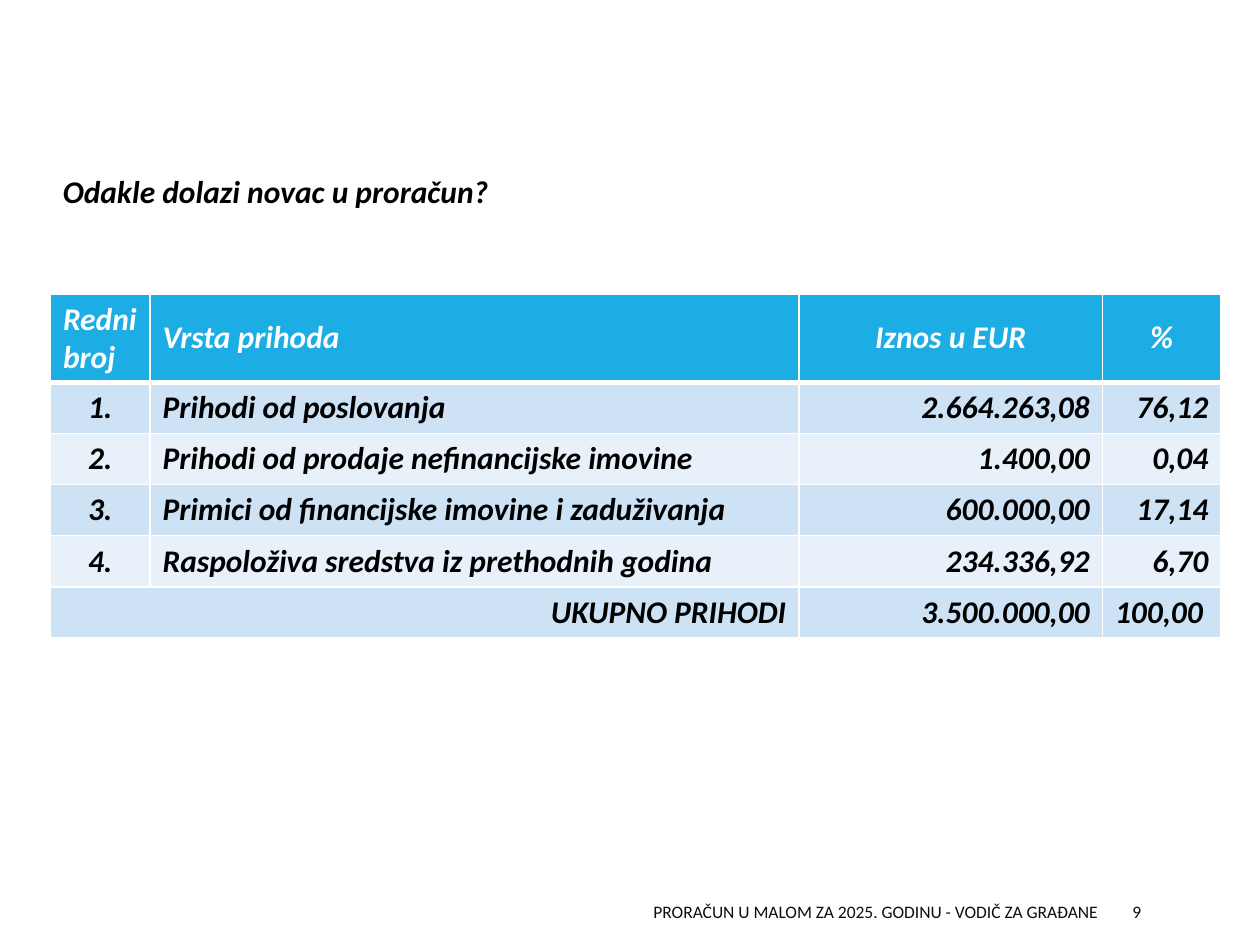
from lxml import etree
from pptx import Presentation
from pptx.dml.color import RGBColor
from pptx.enum.text import MSO_ANCHOR, PP_ALIGN
from pptx.oxml.ns import qn
from pptx.util import Pt

LEFT, CENTER, RIGHT = PP_ALIGN.LEFT, PP_ALIGN.CENTER, PP_ALIGN.RIGHT
TOP, MIDDLE = MSO_ANCHOR.TOP, MSO_ANCHOR.MIDDLE

WHITE = RGBColor(0xFF, 0xFF, 0xFF)
BLACK = RGBColor(0, 0, 0)
FOOTER_GRAY = RGBColor(0x0D, 0x0D, 0x0D)
HEADER_BLUE = RGBColor(0x1C, 0xAD, 0xE4)
BAND_DARK = RGBColor(0xCD, 0xE3, 0xF5)
BAND_LIGHT = RGBColor(0xE8, 0xF1, 0xFA)

COLUMN_WIDTHS = (56.9, 370.8, 173.5, 67.7)
ROW_HEIGHT = 29.25
REVENUE_ROWS = (
    ("Redni broj", "Vrsta prihoda", "Iznos u EUR", "%"),
    ("1.", "Prihodi od poslovanja", "2.664.263,08", "76,12"),
    ("2.", "Prihodi od prodaje nefinancijske imovine", "1.400,00", "0,04"),
    ("3.", "Primici od financijske imovine i zaduživanja", "600.000,00", "17,14"),
    ("4.", "Raspoloživa sredstva iz prethodnih godina", "234.336,92", "6,70"),
    ("UKUPNO PRIHODI", "", "3.500.000,00", "100,00"),
)
HEADER_ALIGNMENTS = (LEFT, LEFT, CENTER, CENTER)
BODY_ALIGNMENTS = (CENTER, LEFT, RIGHT, RIGHT)
TOTAL_ALIGNMENTS = (RIGHT, LEFT, RIGHT, LEFT)


def write_text(frame, text, font="Calibri", size=18, color=BLACK,
               emphasis=True, alignment=LEFT):
    paragraph = frame.paragraphs[0]
    paragraph.alignment = alignment
    run = paragraph.add_run()
    run.text = text
    run.font.name = font
    run.font.size = Pt(size)
    run.font.color.rgb = color
    run.font.bold = emphasis
    run.font.italic = emphasis


def set_borders(cell, **widths):
    properties = cell._tc.get_or_add_tcPr()
    for position, side in enumerate("LRTB"):
        line = etree.Element(qn(f"a:ln{side}"), w=str(Pt(widths.get(side, 1))))
        fill = etree.SubElement(line, qn("a:solidFill"))
        etree.SubElement(fill, qn("a:srgbClr"), val=str(WHITE))
        properties.insert(position, line)


class SlideBuilder:
    def __init__(self, presentation, font="Calibri"):
        self.slide = presentation.slides.add_slide(presentation.slide_layouts[6])
        self.font = font

    def add_text(self, text, left, top, width, height, anchor=TOP, **style):
        shape = self.slide.shapes.add_textbox(Pt(left), Pt(top), Pt(width), Pt(height))
        frame = shape.text_frame
        frame.word_wrap = True
        frame.vertical_anchor = anchor
        write_text(frame, text, font=self.font, **style)

    def add_revenue_table(self, left, top, height):
        shape = self.slide.shapes.add_table(
            len(REVENUE_ROWS), len(COLUMN_WIDTHS),
            Pt(left), Pt(top), Pt(sum(COLUMN_WIDTHS)), Pt(height))
        table = shape.table
        for column, width in zip(table.columns, COLUMN_WIDTHS):
            column.width = Pt(width)
        last = len(REVENUE_ROWS) - 1
        for index, values in enumerate(REVENUE_ROWS):
            table.rows[index].height = Pt(ROW_HEIGHT)
            header = index == 0
            alignments = {0: HEADER_ALIGNMENTS, last: TOTAL_ALIGNMENTS}.get(
                index, BODY_ALIGNMENTS)
            band = BAND_DARK if index % 2 else BAND_LIGHT
            for column, value in enumerate(values):
                cell = table.cell(index, column)
                cell.fill.solid()
                cell.fill.fore_color.rgb = HEADER_BLUE if header else band
                cell.vertical_anchor = MIDDLE if header else TOP
                set_borders(cell, T=3 if index == 1 else 1, B=3 if header else 1)
                if value:
                    write_text(cell.text_frame, value, font=self.font,
                               color=WHITE if header else BLACK,
                               alignment=alignments[column])
        table.cell(last, 0).merge(table.cell(last, 1))
        shape.height = Pt(height)


def main():
    presentation = Presentation()
    presentation.slide_width = Pt(720)
    presentation.slide_height = Pt(540)
    builder = SlideBuilder(presentation)
    footer = dict(anchor=MIDDLE, size=10, color=FOOTER_GRAY, emphasis=False)
    builder.add_text("PRORAČUN U MALOM ZA 2025. GODINU - VODIČ ZA GRAĐANE",
                     285.8, 509.8, 348.5, 21.6, alignment=RIGHT, **footer)
    builder.add_text("9", 640, 509.8, 57.6, 21.6, **footer)
    builder.add_revenue_table(28.8, 168, 196.5)
    builder.add_text("Odakle dolazi novac u proračun?", 28.8, 94.5, 311.8, 29)
    presentation.save("out.pptx")


if __name__ == "__main__":
    main()
